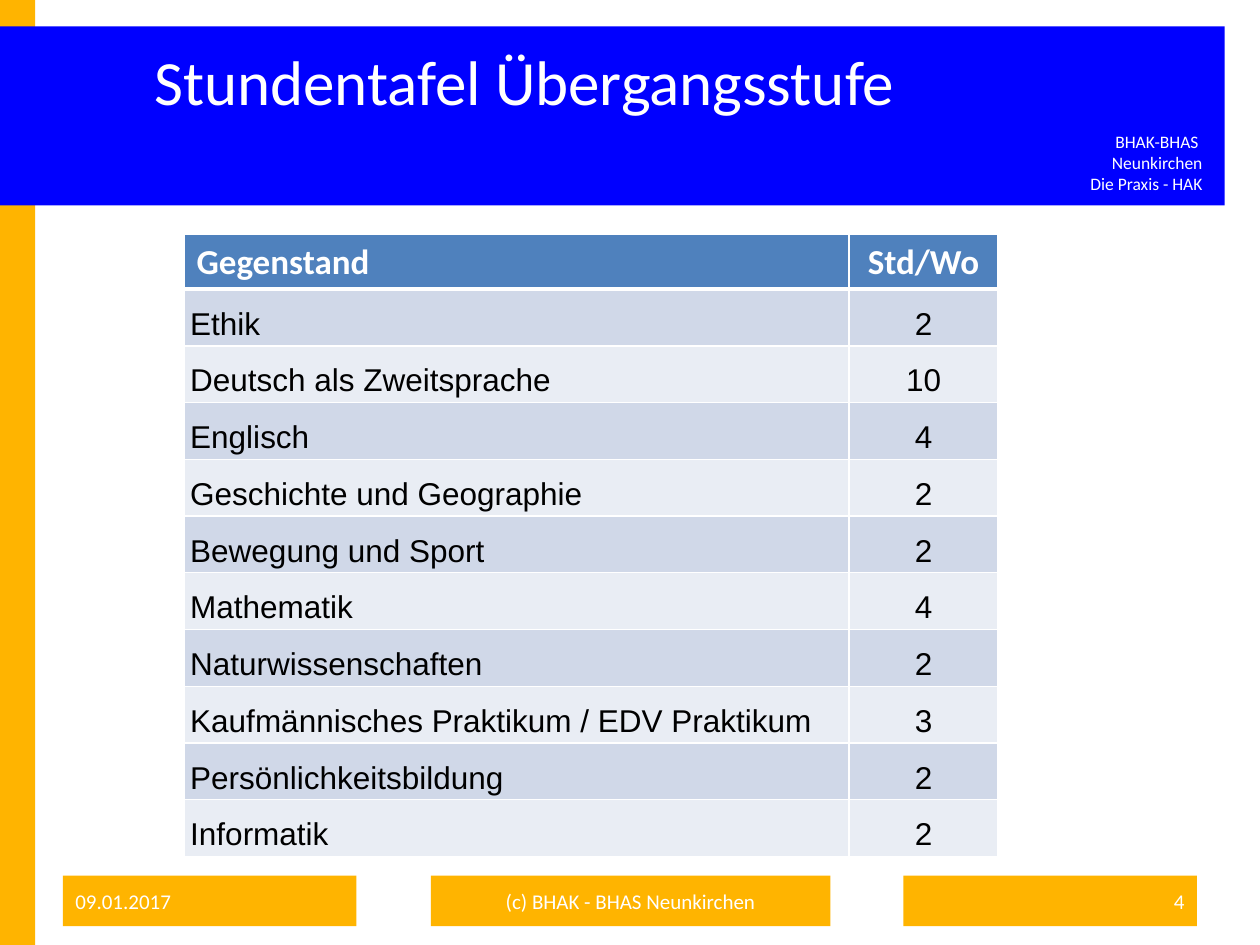
from lxml import etree
from pptx import Presentation
from pptx.dml.color import RGBColor
from pptx.enum.shapes import MSO_SHAPE
from pptx.enum.text import MSO_ANCHOR, PP_ALIGN
from pptx.oxml.ns import qn
from pptx.util import Inches, Pt

RECTANGLE = MSO_SHAPE.RECTANGLE
TOP, MIDDLE = MSO_ANCHOR.TOP, MSO_ANCHOR.MIDDLE
LEFT, CENTER, RIGHT = PP_ALIGN.LEFT, PP_ALIGN.CENTER, PP_ALIGN.RIGHT

COLORS = {
    "white": "FFFFFF",
    "black": "000000",
    "orange": "FFB400",
    "blue": "0000FF",
    "header": "4F81BD",
    "odd": "D0D8E8",
    "even": "E9EDF4",
}
SUBJECTS = [
    ("Ethik", 2),
    ("Deutsch als Zweitsprache", 10),
    ("Englisch", 4),
    ("Geschichte und Geographie", 2),
    ("Bewegung und Sport", 2),
    ("Mathematik", 4),
    ("Naturwissenschaften", 2),
    ("Kaufmännisches Praktikum / EDV Praktikum", 3),
    ("Persönlichkeitsbildung", 2),
    ("Informatik", 2),
]
FOOTERS = [
    (0.5, 2.33, "09.01.2017", LEFT),
    (3.42, 3.17, "(c) BHAK - BHAS Neunkirchen", CENTER),
    (7.17, 2.33, "4", RIGHT),
]


def rgb(name):
    return RGBColor.from_string(COLORS[name])


class TimetableSlide:
    def __init__(self, presentation):
        self.slide = presentation.slides.add_slide(presentation.slide_layouts[5])
        self.shapes = self.slide.shapes

    def fill(self, target, color):
        target.fill.solid()
        target.fill.fore_color.rgb = rgb(color)

    def set_text(self, frame, text, size, align=LEFT, font="Calibri",
                 color="white", bold=False, spacing=None):
        frame.text = text
        paragraph = frame.paragraphs[0]
        paragraph.alignment = align
        if spacing:
            paragraph.line_spacing = spacing
        paragraph.font.name = font
        paragraph.font.size = Pt(size)
        paragraph.font.bold = bold
        paragraph.font.color.rgb = rgb(color)

    def block(self, left, top, width, height, color):
        shape = self.shapes.add_shape(RECTANGLE, Inches(left), Inches(top),
                                      Inches(width), Inches(height))
        shape.shadow.inherit = False
        self.fill(shape, color)
        shape.line.fill.background()
        return shape

    def footer(self, left, width, text, align):
        frame = self.block(left, 6.95, width, 0.4, "orange").text_frame
        frame.vertical_anchor = MIDDLE
        self.set_text(frame, text, 12, align)

    def label(self, left, top, width, height, text):
        box = self.shapes.add_textbox(Inches(left), Inches(top),
                                      Inches(width), Inches(height))
        box.text_frame.word_wrap = True
        self.set_text(box.text_frame, text, 10, RIGHT)

    def title(self, left, top, width, height, text):
        title = self.shapes.title
        title.left, title.top = Inches(left), Inches(top)
        title.width, title.height = Inches(width), Inches(height)
        self.fill(title, "blue")
        title.text_frame.vertical_anchor = TOP
        self.set_text(title.text_frame, text, 36, RIGHT)
        # The title lies in front of the blue band.
        title.element.getparent().append(title.element)

    def borders(self, cell, bottom):
        """Draw white cell borders; bottom is the lower line's width in points."""
        properties = cell._tc.get_or_add_tcPr()
        widths = {"a:lnL": 1, "a:lnR": 1, "a:lnT": 1, "a:lnB": bottom}
        for index, (side, width) in enumerate(widths.items()):
            line = etree.Element(qn(side), w=str(Pt(width)))
            solid = etree.SubElement(line, qn("a:solidFill"))
            etree.SubElement(solid, qn("a:srgbClr"), val=COLORS["white"])
            properties.insert(index, line)

    def table(self, left, top, column_widths, row_height, header, rows):
        records = [header, *rows]
        table = self.shapes.add_table(
            len(records), len(header), Inches(left), Inches(top),
            Inches(sum(column_widths)), Inches(row_height * len(records))).table
        for column, width in zip(table.columns, column_widths):
            column.width = Inches(width)
        for r, record in enumerate(records):
            for c, value in enumerate(record):
                cell = table.cell(r, c)
                align = CENTER if c else LEFT
                if r == 0:
                    self.fill(cell, "header")
                    self.set_text(cell.text_frame, value, 20, align, bold=True)
                else:
                    self.fill(cell, "odd" if r % 2 else "even")
                    cell.margin_left = cell.margin_right = Inches(0.05)
                    cell.margin_top = cell.margin_bottom = 0
                    self.set_text(cell.text_frame, str(value), 18, align,
                                  font="Arial", color="black", spacing=1.5)
                self.borders(cell, bottom=1 if r else 3)


def main():
    presentation = Presentation()
    presentation.slide_width = Inches(10)
    presentation.slide_height = Inches(7.5)

    timetable = TimetableSlide(presentation)
    timetable.block(0, 0, 0.28, 7.5, "orange")
    timetable.block(0, 0.21, 9.72, 1.42, "blue")
    timetable.title(0.51, 0.29, 6.69, 1.25, "Stundentafel Übergangsstufe")
    timetable.label(7.99, 0.99, 1.65, 0.61,
                    "BHAK-BHAS \vNeunkirchen\vDie Praxis - HAK")
    for left, width, text, align in FOOTERS:
        timetable.footer(left, width, text, align)
    timetable.table(1.46, 1.86, [5.28, 1.18], 0.42,
                    ("Gegenstand", "Std/Wo"), SUBJECTS)

    presentation.save("out.pptx")


if __name__ == "__main__":
    main()
